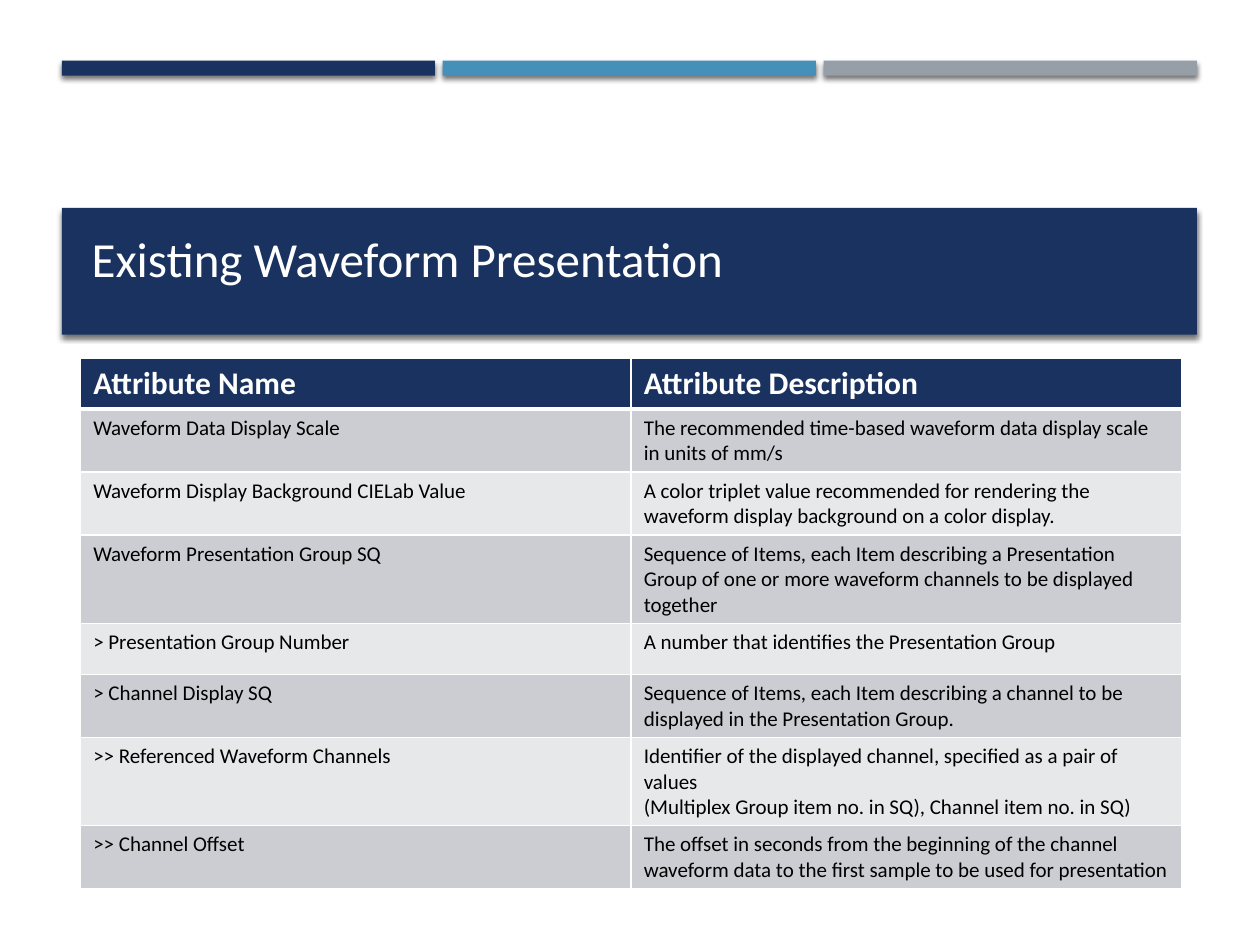
from lxml import etree
from pptx import Presentation
from pptx.dml.color import RGBColor
from pptx.enum.shapes import MSO_SHAPE
from pptx.enum.text import MSO_ANCHOR
from pptx.oxml.ns import qn
from pptx.util import Pt

RECTANGLE = MSO_SHAPE.RECTANGLE
BOTTOM = MSO_ANCHOR.BOTTOM

NAVY = RGBColor(0x1A, 0x32, 0x60)
BLUE = RGBColor(0x45, 0x90, 0xB8)
GRAY = RGBColor(0x96, 0x9F, 0xA7)
DARK_BAND = RGBColor(0xCC, 0xCD, 0xD2)
LIGHT_BAND = RGBColor(0xE7, 0xE8, 0xEA)
WHITE = RGBColor(0xFF, 0xFF, 0xFF)
BLACK = RGBColor(0, 0, 0)

FONT = "Calibri"
THIN, THICK = 0.96, 3

TITLE = "Existing Waveform Presentation"
HEADINGS = ("Attribute Name", "Attribute Description")
ATTRIBUTES = [
    ("Waveform Data Display Scale",
     "The recommended time-based waveform data display scale in units of mm/s"),
    ("Waveform Display Background CIELab Value",
     "A color triplet value recommended for rendering the waveform display "
     "background on a color display."),
    ("Waveform Presentation Group SQ",
     "Sequence of Items, each Item describing a Presentation Group of one or "
     "more waveform channels to be displayed together"),
    ("> Presentation Group Number",
     "A number that identifies the Presentation Group"),
    ("> Channel Display SQ",
     "Sequence of Items, each Item describing a channel to be displayed in "
     "the Presentation Group."),
    (">> Referenced Waveform Channels",
     "Identifier of the displayed channel, specified as a pair of values\n"
     "(Multiplex Group item no. in SQ), Channel item no. in SQ)"),
    (">> Channel Offset",
     "The offset in seconds from the beginning of the channel waveform data "
     "to the first sample to be used for presentation"),
]


def add_color(parent, color):
    fill = etree.SubElement(parent, qn("a:solidFill"))
    return etree.SubElement(fill, qn("a:srgbClr"), val=str(color))


def style_text(frame, size, color, bold=False):
    for paragraph in frame.paragraphs:
        font = paragraph.font
        font.name = FONT
        font.size = Pt(size)
        font.bold = bold
        font.color.rgb = color


def add_shadowed_block(slide, left, top, width, height, color):
    block = slide.shapes.add_shape(
        RECTANGLE, Pt(left), Pt(top), Pt(width), Pt(height))
    block.fill.solid()
    block.fill.fore_color.rgb = color
    block.line.fill.background()
    block.shadow.inherit = False
    effects = block._element.spPr.find(qn("a:effectLst"))
    shadow = etree.SubElement(
        effects, qn("a:outerShdw"), blurRad=str(Pt(3)), dist=str(Pt(2)),
        dir="5400000", algn="ctr", rotWithShape="0")
    shade = etree.SubElement(shadow, qn("a:srgbClr"), val=str(BLACK))
    etree.SubElement(shade, qn("a:alpha"), val="55000")


def add_accent_bars(slide, left, top, width, height):
    colors = (NAVY, BLUE, GRAY)
    gap = 4.4
    bar_width = (width - gap * (len(colors) - 1)) / len(colors)
    for index, color in enumerate(colors):
        add_shadowed_block(slide, left + index * (bar_width + gap), top,
                           bar_width, height, color)


def add_title_band(slide, left, top, width, height):
    add_shadowed_block(slide, left, top, width, height, NAVY)
    title = slide.shapes.add_textbox(
        Pt(left + 10), Pt(top - 16.5), Pt(width - 20), Pt(65.5))
    frame = title.text_frame
    frame.word_wrap = True
    frame.vertical_anchor = BOTTOM
    frame.text = TITLE
    style_text(frame, 28, WHITE)


def set_borders(cell, top, bottom):
    properties = cell._tc.get_or_add_tcPr()
    sides = {"a:lnL": THIN, "a:lnR": THIN, "a:lnT": top, "a:lnB": bottom}
    for side, weight in sides.items():
        border = etree.SubElement(properties, qn(side), w=str(Pt(weight)))
        add_color(border, WHITE)


def add_attribute_table(slide, left, top, width, row_height):
    rows = [HEADINGS, *ATTRIBUTES]
    table = slide.shapes.add_table(
        len(rows), len(HEADINGS), Pt(left), Pt(top), Pt(width),
        Pt(row_height * len(rows))).table
    for row_index, texts in enumerate(rows):
        is_header = row_index == 0
        band = DARK_BAND if row_index % 2 else LIGHT_BAND
        for column_index, text in enumerate(texts):
            cell = table.cell(row_index, column_index)
            cell.text = text
            set_borders(cell, THICK if row_index == 1 else THIN,
                        THICK if is_header else THIN)
            cell.fill.solid()
            cell.fill.fore_color.rgb = NAVY if is_header else band
            if is_header:
                style_text(cell.text_frame, 18, WHITE, bold=True)
            else:
                style_text(cell.text_frame, 12, BLACK)


def main():
    presentation = Presentation()
    presentation.slide_width = Pt(720)
    presentation.slide_height = Pt(540)
    slide = presentation.slides.add_slide(presentation.slide_layouts[6])
    add_accent_bars(slide, 35.3, 34.7, 648.7, 8.5)
    add_title_band(slide, 35.3, 118.8, 648.7, 72.5)
    add_attribute_table(slide, 46.1, 204.5, 629.2, 29.2)
    presentation.save("out.pptx")


if __name__ == "__main__":
    main()
